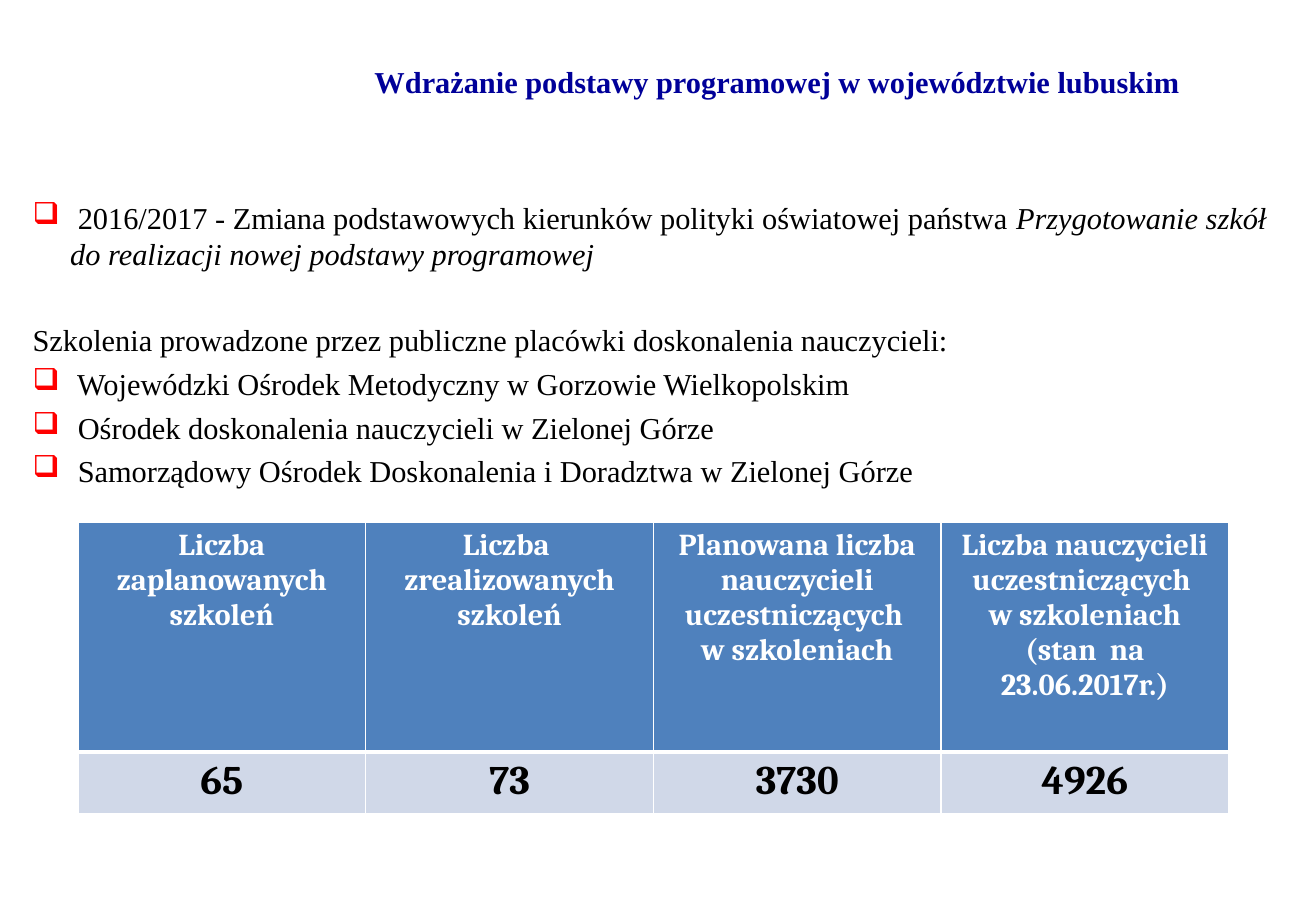
from dataclasses import dataclass

from lxml.etree import SubElement
from pptx import Presentation
from pptx.dml.color import RGBColor
from pptx.enum.text import MSO_ANCHOR, PP_ALIGN
from pptx.oxml import parse_xml
from pptx.oxml.ns import nsdecls, qn
from pptx.util import Inches, Pt


@dataclass(frozen=True)
class Theme:
    navy: str = "000099"
    black: str = "000000"
    white: str = "FFFFFF"
    red: str = "FF0000"
    header_fill: str = "4F81BD"
    value_fill: str = "D0D8E8"
    serif: str = "Times New Roman"
    table_font: str = "Cambria"
    text_size: int = 18
    value_size: int = 24
    paragraph_gap: float = 4.2
    section_gap: float = 29.4
    thin_line: int = 1
    thick_line: int = 3


THEME = Theme()


def write(para, text, font=THEME.serif, size=THEME.text_size,
          color=THEME.black, bold=False, italic=False):
    """Append formatted text to a paragraph; a newline is a line break."""
    for number, line in enumerate(text.split("\n")):
        if number:
            para.add_line_break()
        span = para.add_run()
        span.text = line
        span.font.name = font
        span.font.size = Pt(size)
        span.font.bold = bold
        span.font.italic = italic
        span.font.color.rgb = RGBColor.from_string(color)


def paragraphs(frame, count):
    return [frame.paragraphs[0]] + [frame.add_paragraph() for _ in range(count - 1)]


class Page:
    """One slide; areas are left, top, width, height in percent of its size."""

    def __init__(self, deck, theme):
        self.deck = deck
        self.theme = theme
        self.slide = deck.slides.add_slide(deck.slide_layouts[6])

    def area(self, left, top, width, height):
        across, down = self.deck.slide_width, self.deck.slide_height
        return [round(share * side / 100) for share, side in
                ((left, across), (top, down), (width, across), (height, down))]

    def text_box(self, area):
        frame = self.slide.shapes.add_textbox(*self.area(*area)).text_frame
        frame.word_wrap = True
        return frame

    def title(self, text, area):
        frame = self.text_box(area)
        frame.vertical_anchor = MSO_ANCHOR.MIDDLE
        para = frame.paragraphs[0]
        para.alignment = PP_ALIGN.CENTER
        write(para, text, color=self.theme.navy, bold=True)

    def bullet(self, para):
        properties = para._p.get_or_add_pPr()
        properties.set("marL", str(Inches(0.31)))
        properties.set("indent", str(-Inches(0.31)))
        color = SubElement(properties, qn("a:buClr"))
        SubElement(color, qn("a:srgbClr")).set("val", self.theme.red)
        SubElement(properties, qn("a:buChar")).set("char", "❑")

    def body(self, items, area):
        """Each item is (is bullet, plain text, italic text)."""
        paras = paragraphs(self.text_box(area), len(items))
        for number, (para, (is_bullet, plain, italic)) in enumerate(zip(paras, items)):
            if is_bullet:
                self.bullet(para)
            if number:
                gap = self.theme.paragraph_gap if is_bullet else self.theme.section_gap
                para.space_before = Pt(gap)
            write(para, plain)
            if italic:
                write(para, italic, italic=True)

    def borders(self, cell, top, bottom):
        thin = self.theme.thin_line
        widths = {"lnL": thin, "lnR": thin, "lnT": top, "lnB": bottom}
        for position, (side, width) in enumerate(widths.items()):
            cell._tc.get_or_add_tcPr().insert(position, parse_xml(
                f'<a:{side} {nsdecls("a")} w="{Pt(width)}"><a:solidFill>'
                f'<a:srgbClr val="{self.theme.white}"/></a:solidFill></a:{side}>'))

    def cell(self, cell, texts, fill, top, bottom, **text_format):
        cell.fill.solid()
        cell.fill.fore_color.rgb = RGBColor.from_string(fill)
        self.borders(cell, top, bottom)
        for para, text in zip(paragraphs(cell.text_frame, len(texts)), texts):
            para.alignment = PP_ALIGN.CENTER
            write(para, text, font=self.theme.table_font, bold=True, **text_format)

    def table(self, columns, area, row_heights):
        """Each column is (header paragraphs, value)."""
        theme = self.theme
        table = self.slide.shapes.add_table(
            len(row_heights), len(columns), *self.area(*area)).table
        for row, height in zip(table.rows, row_heights):
            row.height = round(height * self.deck.slide_height / 100)
        for index, (header, value) in enumerate(columns):
            self.cell(table.cell(0, index), header, theme.header_fill,
                      theme.thin_line, theme.thick_line, color=theme.white)
            self.cell(table.cell(1, index), [value], theme.value_fill,
                      theme.thick_line, theme.thin_line, size=theme.value_size)


def main():
    deck = Presentation()
    deck.slide_width, deck.slide_height = Inches(10.83), Inches(7.5)
    page = Page(deck, THEME)
    page.title("Wdrażanie podstawy programowej w województwie lubuskim",
               (19.58, 2.13, 78.95, 13.6))
    page.body([
        (True, " 2016/2017 - Zmiana podstawowych kierunków polityki oświatowej państwa ",
         "Przygotowanie szkół do realizacji nowej podstawy programowej"),
        (False, "Szkolenia prowadzone przez publiczne placówki doskonalenia nauczycieli:", ""),
        (True, " Wojewódzki Ośrodek Metodyczny w Gorzowie Wielkopolskim", ""),
        (True, " Ośrodek doskonalenia nauczycieli w Zielonej Górze", ""),
        (True, " Samorządowy Ośrodek Doskonalenia i Doradztwa w Zielonej Górze", ""),
    ], (1.57, 21.2, 96.86, 34))
    page.table([
        (["Liczba zaplanowanych szkoleń"], "65"),
        (["Liczba ", "zrealizowanych szkoleń"], "73"),
        (["Planowana liczba nauczycieli uczestniczących \nw szkoleniach"], "3730"),
        (["Liczba nauczycieli uczestniczących \nw szkoleniach",
          "(stan  na 23.06.2017r.)"], "4926"),
    ], (5.93, 57.33, 87.44, 32), (25.2, 6.8))
    deck.save("out.pptx")


if __name__ == "__main__":
    main()
